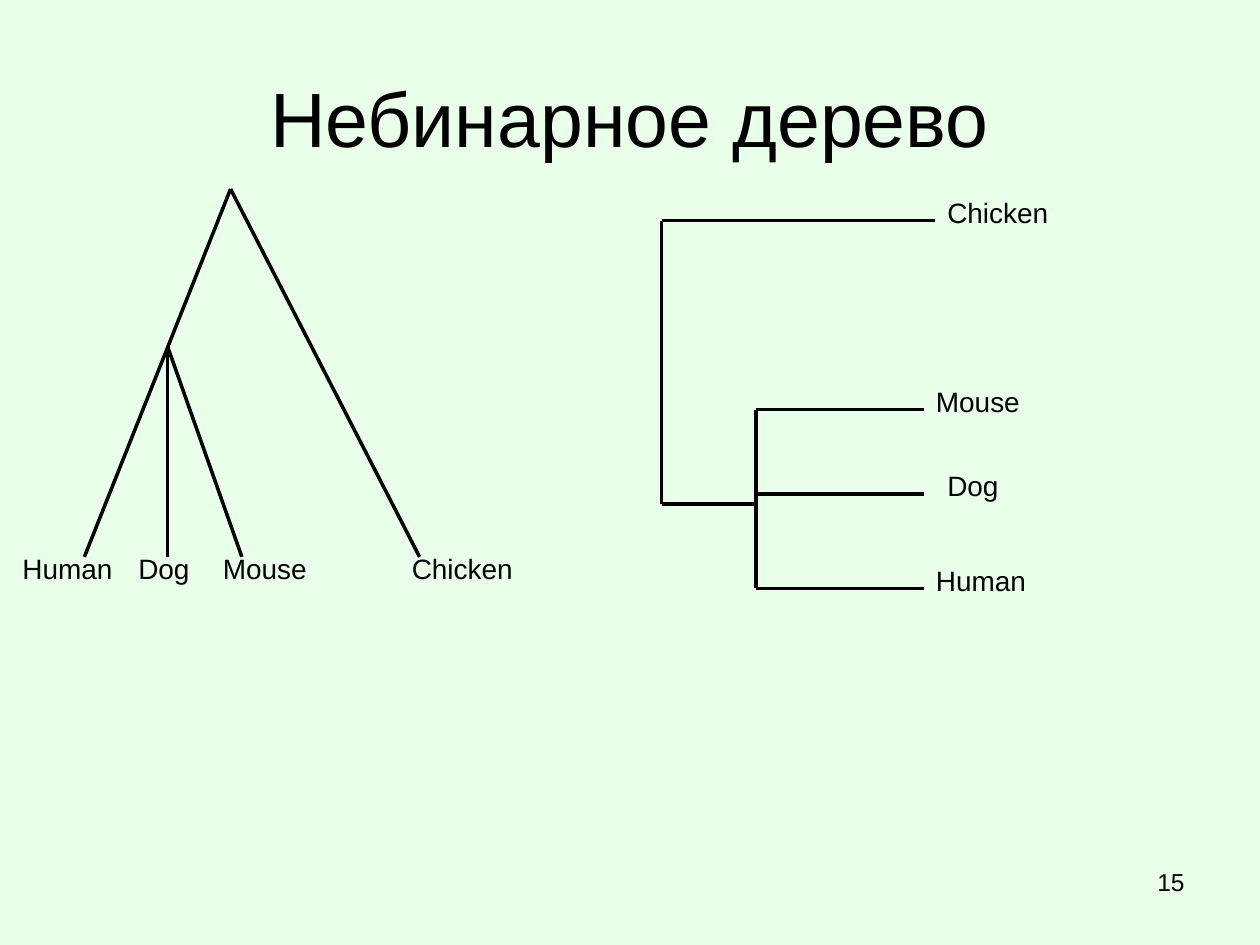
from lxml.etree import SubElement
from pptx import Presentation
from pptx.dml.color import RGBColor
from pptx.enum.shapes import MSO_CONNECTOR
from pptx.enum.text import MSO_ANCHOR, PP_ALIGN
from pptx.oxml.ns import qn
from pptx.util import Inches, Pt

BLACK = RGBColor(0x00, 0x00, 0x00)
PALE_GREEN = RGBColor(0xE9, 0xFF, 0xE9)

TITLE = "Небинарное дерево"
PAGE_NUMBER = "15"
LABEL_WIDTHS = {"Human": 0.92, "Dog": 0.67, "Mouse": 1.25, "Chicken": 1.67}
LABEL_HEIGHT = 0.37

# Slanted tree: branches run down from the root and from the inner node
ROOT, NODE = (1.83, 1.5), (1.33, 2.75)
LEAF_Y, LEAF_LABEL_Y = 4.42, 4.33
SLANTED_LEAVES = [  # name, parent, branch end x, label left
    ("Human", ROOT, 0.67, 0.08),
    ("Dog", NODE, 1.33, 1.0),
    ("Mouse", NODE, 1.92, 1.67),
    ("Chicken", ROOT, 3.33, 3.17),
]

# Rectangular tree: branches run right from two vertical stems
ROOT_X, NODE_X, NODE_Y = 5.25, 6.0, 4.0
SQUARE_LEAVES = [  # name, stem x, branch end x, branch y, label left
    ("Chicken", ROOT_X, 7.42, 1.75, 7.42),
    ("Mouse", NODE_X, 7.33, 3.25, 7.33),
    ("Dog", NODE_X, 7.33, 3.92, 7.42),
    ("Human", NODE_X, 7.33, 4.67, 7.33),
]
LABEL_RISE = 0.25


def add_text(page, text, left, top, width, height, size,
             align=PP_ALIGN.LEFT, anchor=MSO_ANCHOR.TOP):
    box = page.shapes.add_textbox(Inches(left), Inches(top), Inches(width), Inches(height))
    frame = box.text_frame
    frame.word_wrap = True
    frame.vertical_anchor = anchor
    para = frame.paragraphs[0]
    para.alignment = align
    run = para.add_run()
    run.text = text
    run.font.name = "Arial"
    run.font.size = Pt(size)
    run.font.color.rgb = BLACK


def add_label(page, name, left, top):
    add_text(page, name, left, top, LABEL_WIDTHS[name], LABEL_HEIGHT, 16)


def add_branch(page, start, end):
    branch = page.shapes.add_connector(
        MSO_CONNECTOR.STRAIGHT, *(Inches(value) for value in (*start, *end)))
    branch.line.color.rgb = BLACK
    branch.line.width = Pt(2)
    SubElement(branch._element.spPr, qn("a:effectLst"))


def add_slanted_tree(page):
    for name, parent, end_x, label_left in SLANTED_LEAVES:
        add_branch(page, parent, (end_x, LEAF_Y))
        add_label(page, name, label_left, LEAF_LABEL_Y)


def add_square_tree(page):
    for name, stem_x, end_x, y, label_left in SQUARE_LEAVES:
        add_branch(page, (stem_x, y), (end_x, y))
        add_label(page, name, label_left, y - LABEL_RISE)
    node_ys = [y for _, stem_x, _, y, _ in SQUARE_LEAVES if stem_x == NODE_X]
    add_branch(page, (NODE_X, min(node_ys)), (NODE_X, max(node_ys)))
    add_branch(page, (ROOT_X, SQUARE_LEAVES[0][3]), (ROOT_X, NODE_Y))
    add_branch(page, (ROOT_X, NODE_Y), (NODE_X, NODE_Y))


def main():
    deck = Presentation()
    deck.slide_width, deck.slide_height = Inches(10), Inches(7.5)
    page = deck.slides.add_slide(deck.slide_layouts[6])
    page.background.fill.solid()
    page.background.fill.fore_color.rgb = PALE_GREEN

    add_text(page, TITLE, 0.5, 0.3, 9, 1.25, 44, PP_ALIGN.CENTER, MSO_ANCHOR.MIDDLE)
    add_slanted_tree(page)
    add_square_tree(page)
    add_text(page, PAGE_NUMBER, 7.17, 6.83, 2.33, 0.52, 14, PP_ALIGN.RIGHT)
    deck.save("out.pptx")


if __name__ == "__main__":
    main()
